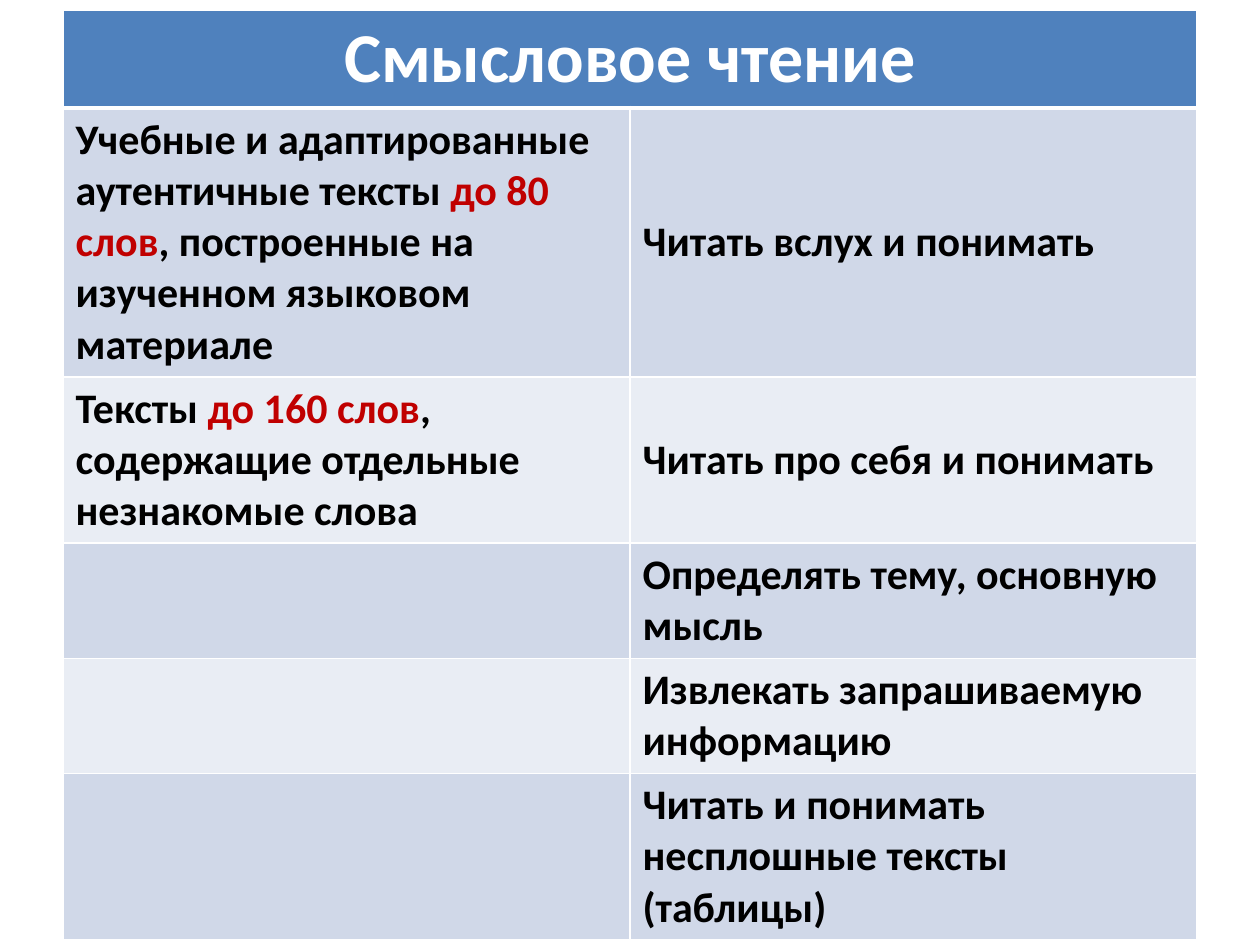
"""Build a one-table slide on reading skills."""
from dataclasses import dataclass, field

from lxml.etree import SubElement
from pptx import Presentation
from pptx.dml.color import RGBColor
from pptx.enum.text import MSO_ANCHOR as Anchor, PP_ALIGN as Align
from pptx.oxml.ns import qn
from pptx.util import Inches, Pt

WHITE, BLACK, RED, BLUE = "FFFFFF", "000000", "C00000", "4F81BD"
BANDS = ("D0D8E8", "E9EDF4")


@dataclass
class Run:
    text: str
    color: str = BLACK


@dataclass
class Row:
    height: float
    skill: str
    texts: list[Run] = field(default_factory=list)
    anchor: Anchor = Anchor.TOP


HEADER_HEIGHT = 0.63
ROWS = [
    Row(1.83, "Читать вслух и понимать", [
        Run("Учебные и адаптированные аутентичные тексты "),
        Run("до 80 слов", RED),
        Run(", построенные на изученном языковом материале"),
    ], Anchor.MIDDLE),
    Row(1.13, "Читать про себя и понимать", [
        Run("Тексты "),
        Run("до 160 слов", RED),
        Run(", содержащие отдельные незнакомые слова"),
    ], Anchor.MIDDLE),
    Row(0.78, "Определять тему, основную мысль"),
    Row(0.78, "Извлекать запрашиваемую информацию"),
    Row(1.13, "Читать и понимать несплошные тексты (таблицы)"),
]


def rgb(value: str) -> RGBColor:
    return RGBColor.from_string(value)


def set_borders(cell, top: float = 1, bottom: float = 1) -> None:
    tcPr = cell._tc.get_or_add_tcPr()
    widths = {"a:lnL": 1, "a:lnR": 1, "a:lnT": top, "a:lnB": bottom}
    for i, (tag, width) in enumerate(widths.items()):
        ln = SubElement(tcPr, qn(tag), w=str(Pt(width)))
        SubElement(SubElement(ln, qn("a:solidFill")), qn("a:srgbClr"), val=WHITE)
        tcPr.insert(i, ln)


def fill_cell(cell, fill: str, runs: list[Run], size: int = 24,
              align: Align | None = None, anchor: Anchor = Anchor.TOP) -> None:
    cell.fill.solid()
    cell.fill.fore_color.rgb = rgb(fill)
    cell.vertical_anchor = anchor
    p = cell.text_frame.paragraphs[0]
    p.alignment = align
    for run in runs:
        r = p.add_run()
        r.text = run.text
        for name, value in {"name": "Calibri", "size": Pt(size), "bold": True}.items():
            setattr(r.font, name, value)
        r.font.color.rgb = rgb(run.color)


def main() -> None:
    prs = Presentation()
    prs.slide_width, prs.slide_height = Inches(10), Inches(7.5)
    s = prs.slides.add_slide(prs.slide_layouts[6])
    frame = s.shapes.add_table(len(ROWS) + 1, 2, Inches(0.5), Inches(0.08),
                               Inches(9), Inches(7.27))
    table = frame.table
    heights = [HEADER_HEIGHT] + [row.height for row in ROWS]
    for line, height in zip(table.rows, heights):
        line.height = Inches(height)
    frame.height = Inches(7.27)

    title = table.cell(0, 0)
    title.merge(table.cell(0, 1))
    fill_cell(title, BLUE, [Run("Смысловое чтение", WHITE)], 40, Align.CENTER)
    for col in range(2):
        set_borders(table.cell(0, col), bottom=3)

    for i, row in enumerate(ROWS):
        fill = BANDS[i % 2]
        left, right = table.cell(i + 1, 0), table.cell(i + 1, 1)
        fill_cell(left, fill, row.texts)
        fill_cell(right, fill, [Run(row.skill)], anchor=row.anchor)
        for cell in (left, right):
            set_borders(cell, top=1 if i else 3)

    prs.save("out.pptx")


if __name__ == "__main__":
    main()
